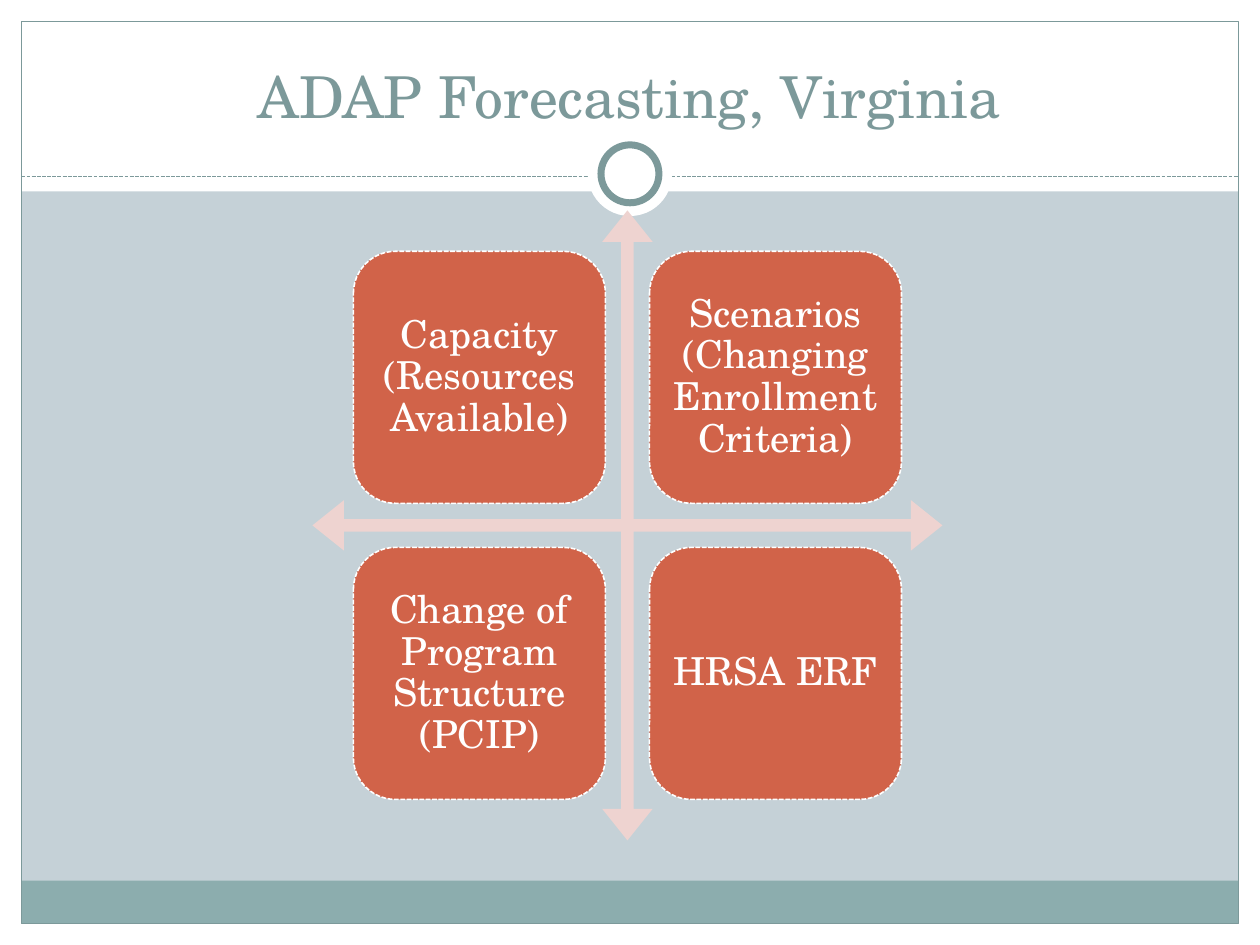
import pptx
import pptx.dml.color
import pptx.enum.dml
import pptx.enum.shapes
import pptx.enum.text
import pptx.util
from lxml import etree
from pptx.util import Inches

RGBColor = pptx.dml.color.RGBColor
Shape = pptx.enum.shapes.MSO_SHAPE
Anchor = pptx.enum.text.MSO_ANCHOR
DASH = pptx.enum.dml.MSO_LINE.SQUARE_DOT

WHITE = RGBColor(0xFF, 0xFF, 0xFF)
BACKGROUND = RGBColor(0xC5, 0xD1, 0xD7)
TEAL = RGBColor(0x7C, 0x99, 0x9A)
BAND = RGBColor(0x8C, 0xAD, 0xAE)
ARROW = RGBColor(0xEE, 0xD3, 0xD0)
TILE = RGBColor(0xD1, 0x63, 0x49)
FONT = "TeX Gyre Schola"
FACTORS = [
    ["Capacity (Resources Available)", "Scenarios (Changing Enrollment Criteria)"],
    ["Change of Program Structure (PCIP)", "HRSA ERF"],
]


def set_line(line, color, width, dash=None):
    """Give a line its colour, width in points and optional dash."""
    line.color.rgb = color
    line.width = pptx.util.Pt(width)
    if dash is not None:
        line.dash_style = dash


def add_box(slide, box, kind=Shape.RECTANGLE, fill=None, line=None):
    """Add a shape in the box, measured in inches, with an optional fill and line."""
    shape = slide.shapes.add_shape(kind, *map(Inches, box))
    shape.shadow.inherit = False
    if fill is None:
        shape.fill.background()
    else:
        shape.fill.solid()
        shape.fill.fore_color.rgb = fill
    if line is None:
        shape.line.fill.background()
    else:
        set_line(shape.line, *line)
    return shape


def write_text(shape, text, *, size, color, anchor=Anchor.MIDDLE, inset=0.05, spacing=1.0):
    """Write one centred paragraph in a shape."""
    frame = shape.text_frame
    frame.text = text
    frame.word_wrap = True
    frame.auto_size = pptx.enum.text.MSO_AUTO_SIZE.NONE
    frame.vertical_anchor = anchor
    frame.margin_left = frame.margin_right = Inches(inset)
    frame.margin_top = frame.margin_bottom = Inches(inset)
    paragraph = frame.paragraphs[0]
    paragraph.alignment = pptx.enum.text.PP_ALIGN.CENTER
    paragraph.line_spacing = spacing
    font = paragraph.runs[0].font
    font.name = FONT
    font.size = pptx.util.Pt(size)
    font.color.rgb = color


def add_frame(slide, box):
    """Draw the white margins, bottom band, outline and header ring in the box."""
    left, top, width, height = box
    margin, header, band = 0.17, 1.52, 0.34
    right, bottom = left + width - margin, top + height - margin
    inner = width - 2 * margin
    for edge in [
        (left, bottom, width, margin),
        (left, top, width, header),
        (left, top, margin, height),
        (right, top, margin, height),
    ]:
        add_box(slide, edge, fill=WHITE)
    add_box(slide, (left + margin, bottom - band, inner, band), fill=BAND)
    add_box(slide, (left + margin, top + margin, inner, height - 2 * margin), line=(TEAL, 0.75))

    divider_y = Inches(top + 1.4)
    divider = slide.shapes.add_connector(
        pptx.enum.shapes.MSO_CONNECTOR.STRAIGHT,
        Inches(left + margin), divider_y, Inches(right), divider_y)
    set_line(divider.line, TEAL, 0.75, DASH)
    etree.SubElement(divider.element.spPr, pptx.oxml.ns.qn("a:effectLst"))

    center_x, center_y = left + width / 2, top + 1.38
    for diameter, line in [(0.67, None), (0.46, (TEAL, 4))]:
        ring = (center_x - diameter / 2, center_y - diameter / 2, diameter, diameter)
        add_box(slide, ring, Shape.OVAL, WHITE, line)


def add_title(slide, box, text):
    """Place the title placeholder in the box, in front of the frame."""
    title = slide.shapes.title
    title.left, title.top, title.width, title.height = map(Inches, box)
    write_text(title, text, size=33, color=TEAL, anchor=Anchor.BOTTOM)
    title.element.getparent().append(title.element)


def add_matrix(slide, box, rows):
    """Draw the four-way arrow in the box and one tile in each quadrant."""
    left, top, width, height = box
    arrow = add_box(slide, box, Shape.QUAD_ARROW, ARROW)
    for index, value in enumerate((0.02, 0.04, 0.05)):
        arrow.adjustments[index] = value
    tile, offset, step = 0.4 * width, 0.065 * width, 0.47 * width
    for row, labels in enumerate(rows):
        for column, label in enumerate(labels):
            place = (left + offset + column * step, top + offset + row * step, tile, tile)
            factor = add_box(slide, place, Shape.ROUNDED_RECTANGLE, TILE, (WHITE, 0.9, DASH))
            write_text(factor, label, size=22, color=WHITE, spacing=0.9)


def main():
    """Build the slide and save it."""
    deck = pptx.Presentation()
    deck.slide_width, deck.slide_height = Inches(10), Inches(7.5)
    slide = deck.slides.add_slide(deck.slide_layouts[5])
    slide.background.fill.solid()
    slide.background.fill.fore_color.rgb = BACKGROUND
    add_frame(slide, (0, 0, 10, 7.5))
    add_title(slide, (0.33, 0.25, 9.33, 0.83), "ADAP Forecasting, Virginia")
    add_matrix(slide, (2.48, 1.67, 5, 5), FACTORS)
    deck.save("out.pptx")


if __name__ == "__main__":
    main()
